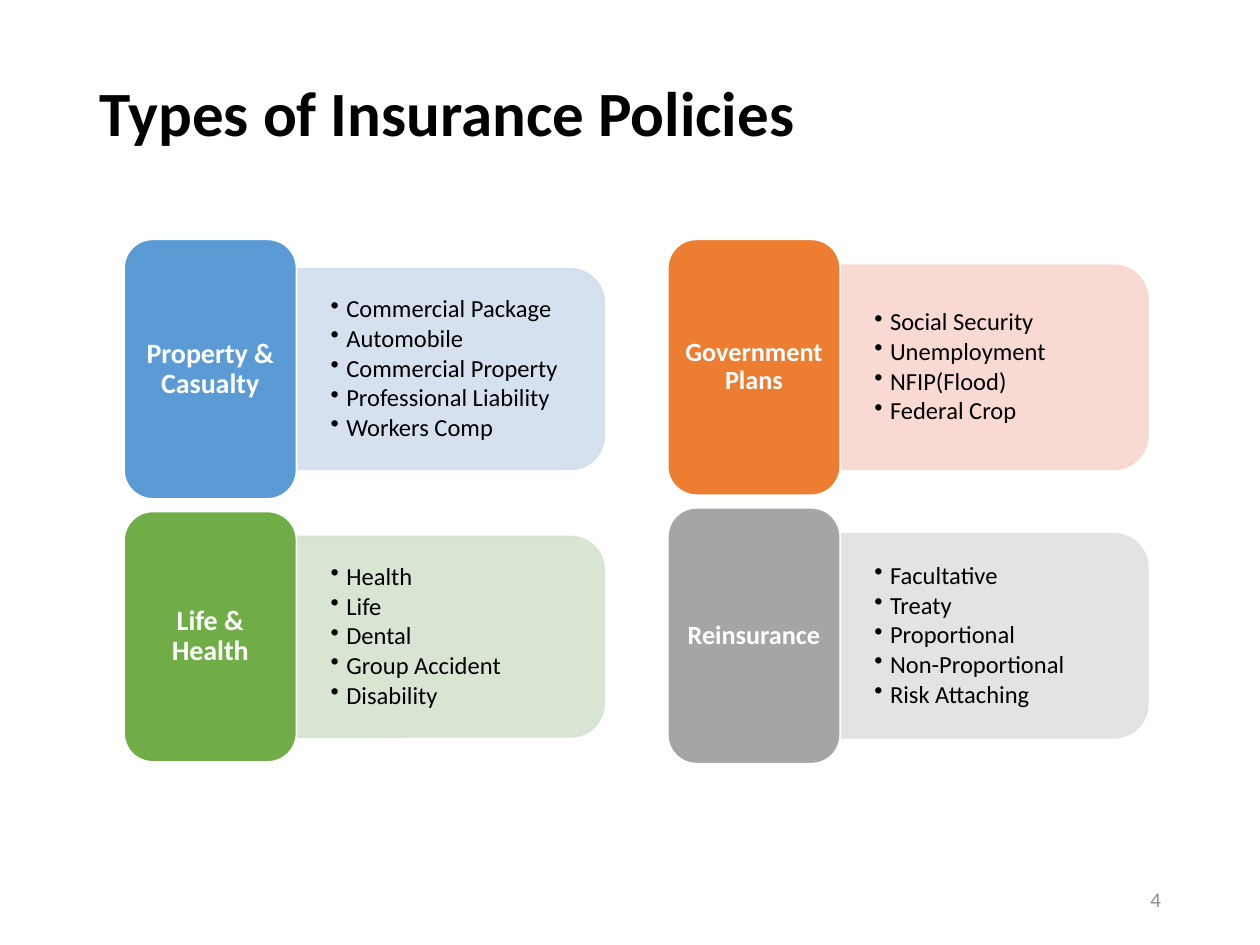
import pptx
import pptx.util
import pptx.dml.color
import pptx.enum.shapes
import pptx.enum.text
import pptx.oxml.ns
from lxml import etree

Pt = pptx.util.Pt
ALIGN = pptx.enum.text.PP_ALIGN
MIDDLE = pptx.enum.text.MSO_ANCHOR.MIDDLE
SHAPE = pptx.enum.shapes.MSO_SHAPE
qn = pptx.oxml.ns.qn

TITLE = "Types of Insurance Policies"
COLORS = {
    "black": "000000", "white": "FFFFFF", "number": "8C8C8C",
    "blue": "5B9BD5", "pale blue": "D2DEEF",
    "green": "70AD47", "pale green": "D5E3CF",
    "orange": "ED7D31", "pale orange": "F8D7CE",
    "gray": "A5A5A5", "pale gray": "E1E1E1",
}
COLUMNS = [
    {"left": 70.9, "panel_height": 114.5, "label_size": 16, "cards": [
        ("Property & Casualty", "blue", 148.3,
         ["Commercial Package", "Automobile", "Commercial Property",
          "Professional Liability", "Workers Comp"]),
        ("Life & Health", "green", 143.1,
         ["Health", "Life", "Dental", "Group Accident", "Disability"]),
    ]},
    {"left": 381.6, "panel_height": 116.6, "label_size": 15, "cards": [
        ("Government Plans", "orange", 146.2,
         ["Social Security", "Unemployment", "NFIP(Flood)", "Federal Crop"]),
        ("Reinsurance", "gray", 146.2,
         ["Facultative", "Treaty", "Proportional", "Non-Proportional",
          "Risk Attaching"]),
    ]},
]
TOP, GAP = 136.8, 7.2
LABEL_WIDTH, PANEL_WIDTH, LIST_WIDTH = 98.6, 175.7, 170
BULLET_INDENT = 9


def rgb(name):
    return pptx.dml.color.RGBColor.from_string(COLORS[name])


def place(shape, left, top, width, height):
    shape.left, shape.top = Pt(left), Pt(top)
    shape.width, shape.height = Pt(width), Pt(height)


def set_frame(frame, side, edge):
    frame.word_wrap = True
    frame.vertical_anchor = MIDDLE
    frame.margin_left = frame.margin_right = Pt(side)
    frame.margin_top = frame.margin_bottom = Pt(edge)


def style(para, size, color, bold=False, align=ALIGN.LEFT):
    para.alignment = align
    para.line_spacing = 0.9
    for span in para.runs:
        span.font.name = "Calibri"
        span.font.size = Pt(size)
        span.font.bold = bold
        span.font.color.rgb = rgb(color)


def add_block(page, kind, left, top, width, height, fill, line):
    block = page.shapes.add_shape(kind, Pt(left), Pt(top), Pt(width), Pt(height))
    block.shadow.inherit = False
    block.fill.solid()
    block.fill.fore_color.rgb = rgb(fill)
    block.line.color.rgb = rgb(line)
    block.line.width = Pt(1)
    return block


def add_panel(page, left, middle, height, color):
    center = left + PANEL_WIDTH / 2
    panel = add_block(page, SHAPE.ROUND_2_SAME_RECTANGLE, center - height / 2,
                      middle - PANEL_WIDTH / 2, height, PANEL_WIDTH, color, color)
    panel.rotation = 90
    for tint in panel.fill._xPr.iter(qn("a:srgbClr")):
        etree.SubElement(tint, qn("a:alpha"), val="90000")


def add_list(page, left, middle, height, items):
    box_height = height - 11
    box = page.shapes.add_textbox(Pt(left), Pt(middle - box_height / 2),
                                  Pt(LIST_WIDTH), Pt(box_height))
    set_frame(box.text_frame, 19.4, 10)
    box.text_frame.text = "\n".join(items)
    for para in box.text_frame.paragraphs:
        properties = para._p.get_or_add_pPr()
        properties.set("marL", str(Pt(BULLET_INDENT)))
        properties.set("indent", str(-Pt(BULLET_INDENT)))
        etree.SubElement(properties, qn("a:buChar"), char="•")
        style(para, 14, "black")
        para.space_after = Pt(1.8)


def add_label(page, left, top, height, text, color, size):
    label = add_block(page, SHAPE.ROUNDED_RECTANGLE, left, top, LABEL_WIDTH,
                      height, color, "white")
    set_frame(label.text_frame, 4.5, 2.4)
    label.text_frame.text = text
    style(label.text_frame.paragraphs[0], size, "white", True, ALIGN.CENTER)


def add_column(page, column):
    left, top = column["left"], TOP
    panel_left = left + LABEL_WIDTH
    for text, color, height, items in column["cards"]:
        middle = top + height / 2
        add_panel(page, panel_left, middle, column["panel_height"], "pale " + color)
        add_list(page, panel_left, middle, column["panel_height"], items)
        add_label(page, left, top, height, text, color, column["label_size"])
        top += height + GAP


def main():
    deck = pptx.Presentation()
    deck.slide_width, deck.slide_height = Pt(720), Pt(540)
    page = deck.slides.add_slide(deck.slide_layouts[5])

    title = page.shapes.title
    place(title, 49.5, 28.8, 621, 75.6)
    set_frame(title.text_frame, 7.2, 3.6)
    title.text_frame.text = TITLE
    style(title.text_frame.paragraphs[0], 36, "black", True)

    for column in COLUMNS:
        add_column(page, column)

    number = page.shapes.add_textbox(Pt(508.5), Pt(500.5), Pt(162), Pt(28.8))
    set_frame(number.text_frame, 7.2, 3.6)
    number.text_frame.text = "4"
    style(number.text_frame.paragraphs[0], 12, "number", align=ALIGN.RIGHT)

    deck.save("out.pptx")


if __name__ == "__main__":
    main()
